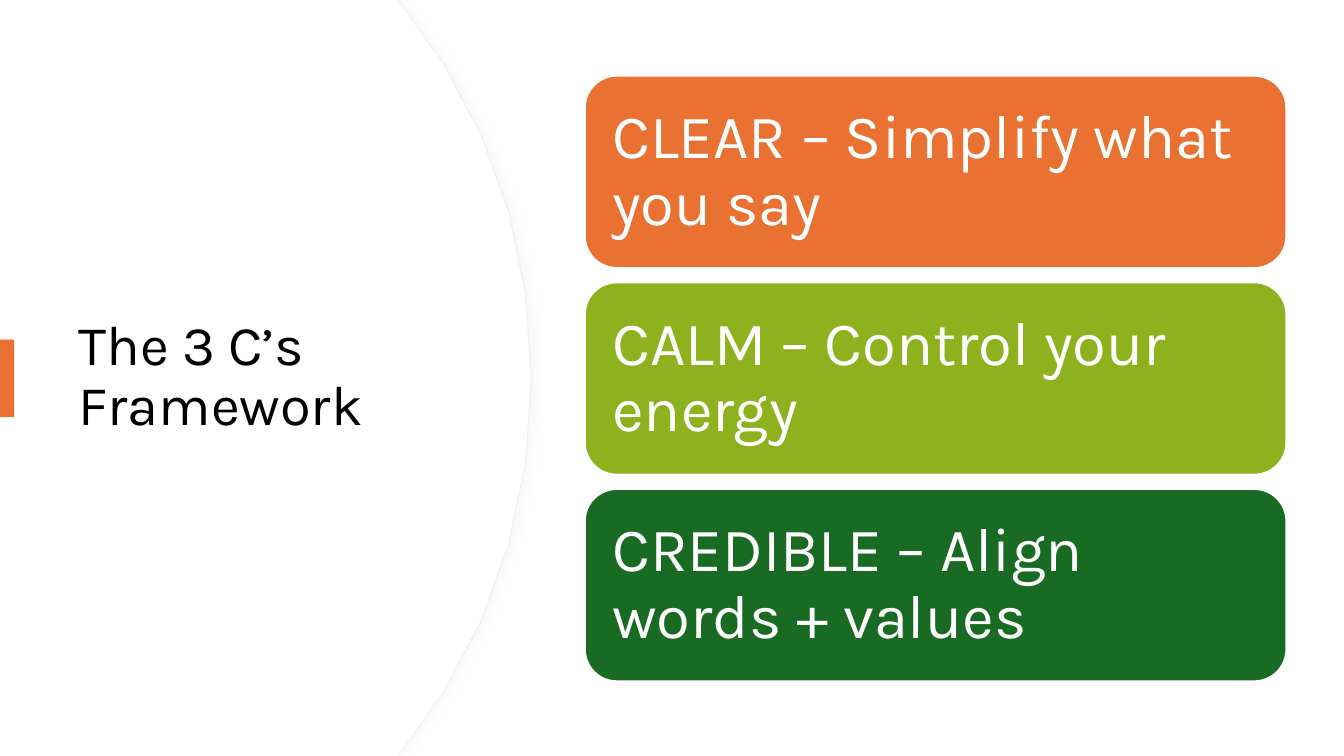
import pptx
import pptx.util
import pptx.dml.color
import pptx.enum.shapes
import pptx.enum.text
import pptx.oxml

TITLE = "The 3 C’s Framework"
CARDS = [
    ("CLEAR – Simplify what you say", "E97132"),
    ("CALM – Control your energy", "8EB21E"),
    ("CREDIBLE – Align words + values", "196B24"),
]
THEME = {
    "font": "Karla", "title": 40, "card": 44, "ink": "000000",
    "white": "FFFFFF", "edge": "EFEFEF", "shade": "D9D9D9", "accent": "E97132",
}

PX = 9144  # 100 px to the inch
WIDE, HIGH = 1333, 750
PANELS = [527, 526]  # right edges, back to front
TAB = (0, 337, 14, 77)
HEAD = (68, 127, 394, 495)
LEFT, TOP, CARD_W, CARD_H, GAP = 580, 75, 696, 191, 14
INSET = 18
STEPS = 5

SHAPE = pptx.enum.shapes.MSO_SHAPE


def px(n):
    return round(n * PX)


def rgb(code):
    return pptx.dml.color.RGBColor.from_string(code)


def paint(shape, fill, line=None, width=0):
    shape.shadow.inherit = False
    shape.fill.solid()
    shape.fill.fore_color.rgb = rgb(fill)
    if line:
        shape.line.color.rgb = rgb(line)
        shape.line.width = pptx.util.Pt(width)
    else:
        shape.line.fill.background()


def write(shape, text, size, color, inset):
    frame = shape.text_frame
    frame.word_wrap = True
    frame.vertical_anchor = pptx.enum.text.MSO_ANCHOR.MIDDLE
    frame.margin_left = frame.margin_right = px(inset[0])
    frame.margin_top = frame.margin_bottom = px(inset[1])
    para = frame.paragraphs[0]
    para.alignment = pptx.enum.text.PP_ALIGN.LEFT
    para.line_spacing = 0.9
    run = para.add_run()
    run.text = text
    run.font.name = THEME["font"]
    run.font.size = pptx.util.Pt(size)
    run.font.color.rgb = rgb(color)


def add_box(slide, kind, box):
    return slide.shapes.add_shape(kind, *map(px, box))


def bulge(right):
    """Return the points of the curved right side, top to bottom."""
    curve = [(394, 0), (right - 48, 102), (right, 232), (right, HIGH / 2)]
    half = []
    for i in range(STEPS + 1):
        t = i / STEPS
        mix = ((1 - t) ** 3, 3 * t * (1 - t) ** 2, 3 * t * t * (1 - t), t ** 3)
        half.append(tuple(sum(m * p[k] for m, p in zip(mix, curve)) for k in (0, 1)))
    return half + [(x, HIGH - y) for x, y in reversed(half[:-1])]


def add_panel(slide, right):
    pen = slide.shapes.build_freeform(0, 0, scale=1.0)
    edge = bulge(right) + [(0, HIGH)]
    pen.add_line_segments([(px(x), px(y)) for x, y in edge], close=True)
    return pen.convert_to_shape()


def add_shade(shape):
    space = "http://schemas.openxmlformats.org/drawingml/2006/main"
    blur, dist = pptx.util.Pt(7), pptx.util.Pt(3)
    glow = pptx.oxml.parse_xml(
        f'<a:outerShdw xmlns:a="{space}" blurRad="{blur}" dist="{dist}" dir="0" '
        f'algn="l" rotWithShape="0"><a:srgbClr val="{THEME["shade"]}">'
        '<a:alpha val="20000"/></a:srgbClr></a:outerShdw>')
    shape.element.spPr.find(f"{{{space}}}effectLst").append(glow)


def main():
    deck = pptx.Presentation()
    deck.slide_width, deck.slide_height = px(WIDE), px(HIGH)
    slide = deck.slides.add_slide(deck.slide_layouts[6])

    back, front = [add_panel(slide, right) for right in PANELS]
    paint(back, THEME["white"], THEME["edge"], 0.75)
    add_shade(back)
    paint(front, THEME["white"])

    head = slide.shapes.add_textbox(*map(px, HEAD))
    write(head, TITLE, THEME["title"], THEME["ink"], (10, 5))
    paint(add_box(slide, SHAPE.RECTANGLE, TAB), THEME["accent"])

    for i, (text, fill) in enumerate(CARDS):
        top = TOP + i * (CARD_H + GAP)
        card = add_box(slide, SHAPE.ROUNDED_RECTANGLE, (LEFT, top, CARD_W, CARD_H))
        paint(card, fill, THEME["white"], 1.5)
        write(card, text, THEME["card"], THEME["white"], (INSET, INSET))

    deck.save("out.pptx")


if __name__ == "__main__":
    main()
